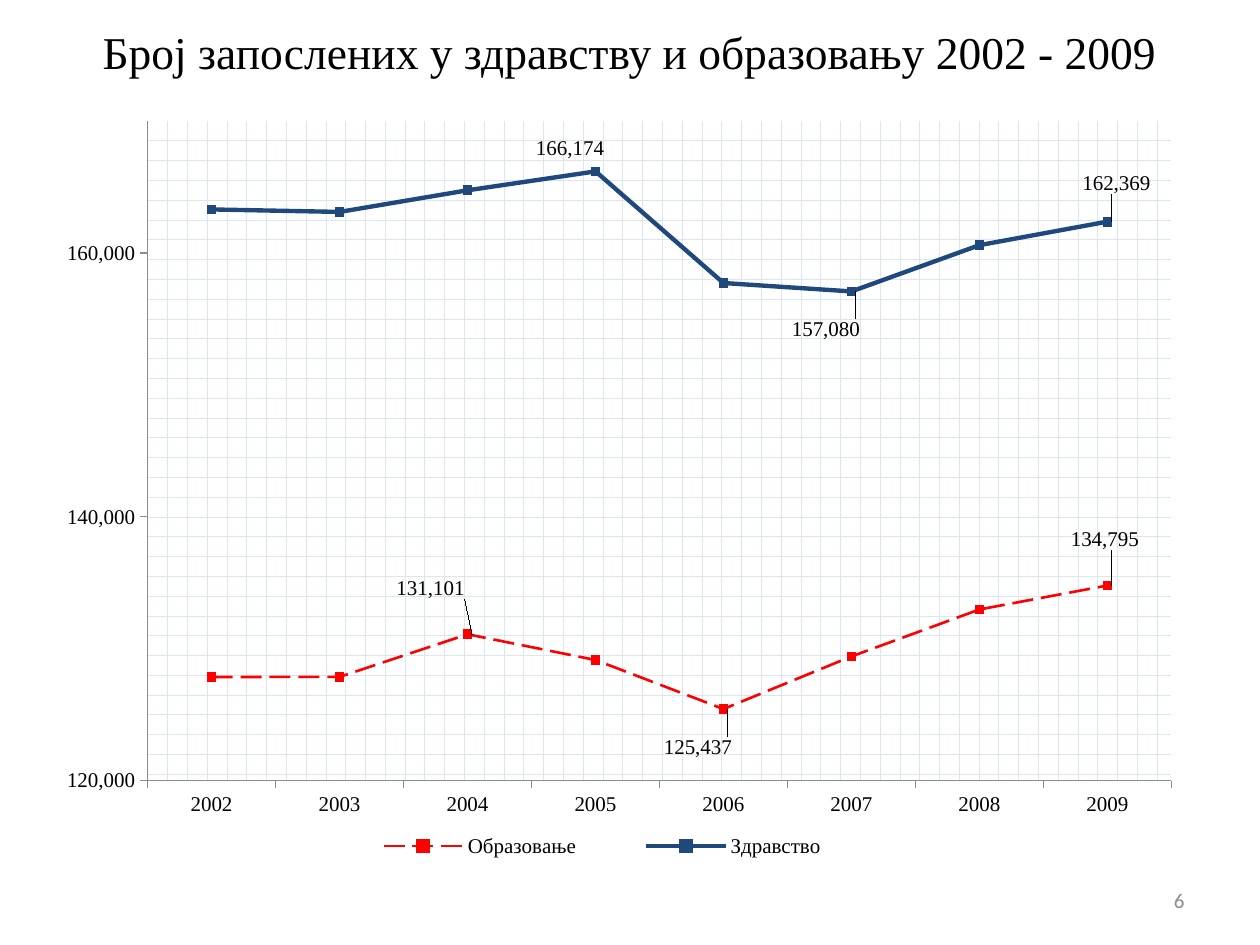
from lxml import etree
from pptx import Presentation
from pptx.chart.data import CategoryChartData
from pptx.dml.color import RGBColor
from pptx.enum import chart as charts, dml, text
from pptx.oxml.ns import qn
from pptx.util import Cm, Pt

BLACK = RGBColor(0, 0, 0)
WHITE = RGBColor(255, 255, 255)
GREY = RGBColor(0x8C, 0x8C, 0x8C)
RED = RGBColor(255, 0, 0)
NAVY = RGBColor(0x1F, 0x49, 0x7D)
SERIF = "Times New Roman"

YEARS = [str(year) for year in range(2002, 2010)]
# Label offsets are fractions of the chart size, keyed by point index
SERIES = [
    {"name": "Образовање", "color": RED, "width": 1.5, "dash": dml.MSO_LINE.LONG_DASH,
     "values": [127865, 127871, 131101, 129149, 125437, 129421, 132982, 134795],
     "labels": {2: (-0.07, -0.06), 4: (-0.06, 0.05), 7: (-0.04, -0.06)}},
    {"name": "Здравство", "color": NAVY, "width": 2.5, "dash": None,
     "values": [163293, 163104, 164743, 166174, 157720, 157080, 160587, 162369],
     "labels": {3: (-0.06, -0.03), 5: (-0.06, 0.05), 7: (-0.03, -0.05)}},
]


def set_all(target, values):
    for name, value in values.items():
        setattr(target, name, value)


def format_font(font, size, color=BLACK, name=SERIF):
    set_all(font, {"size": Pt(size), "name": name, "bold": False})
    font.color.rgb = color


def add_text(page, wording, place, align, size, color=BLACK, name=SERIF):
    frame = page.shapes.add_textbox(*map(Cm, place)).text_frame
    set_all(frame, {"word_wrap": True, "vertical_anchor": text.MSO_ANCHOR.MIDDLE})
    para = frame.paragraphs[0]
    para.alignment = align
    span = para.add_run()
    span.text = wording
    format_font(span.font, size, color, name)


def set_layout(parent, index, values):
    """Place a chart part by hand, given its layout values."""
    for old in parent.findall(qn("c:layout")):
        parent.remove(old)
    layout = etree.Element(qn("c:layout"))
    manual = etree.SubElement(layout, qn("c:manualLayout"))
    for tag, value in values.items():
        etree.SubElement(manual, qn(f"c:{tag}")).set("val", str(value))
    parent.insert(index, layout)


def fill_plot_area(plot_area):
    """Light dotted grid behind the lines."""
    properties = etree.SubElement(plot_area, qn("c:spPr"))
    pattern = etree.SubElement(properties, qn("a:pattFill"), prst="dotGrid")
    for tag, color in (("fgClr", "DCE6F2"), ("bgClr", "FFFFFF")):
        holder = etree.SubElement(pattern, qn(f"a:{tag}"))
        etree.SubElement(holder, qn("a:srgbClr"), val=color)


def format_axis(axis):
    set_all(axis, {"has_major_gridlines": False,
                   "major_tick_mark": charts.XL_TICK_MARK.OUTSIDE,
                   "minor_tick_mark": charts.XL_TICK_MARK.NONE})
    axis.format.line.color.rgb = GREY
    axis.format.line.width = Pt(0.75)
    format_font(axis.tick_labels.font, 12)


def format_series(series, style):
    color = style["color"]
    series.smooth = False
    line = series.format.line
    line.color.rgb = color
    set_all(line, {"width": Pt(style["width"]), "dash_style": style["dash"]})

    marker = series.marker
    set_all(marker, {"style": charts.XL_MARKER_STYLE.SQUARE, "size": 5})
    marker.format.fill.solid()
    marker.format.fill.fore_color.rgb = color
    marker.format.line.color.rgb = color

    # Only the turning points carry a value
    labels = series.data_labels
    set_all(labels, {"show_value": False, "number_format": "#,##0",
                     "number_format_is_linked": False})
    format_font(labels.font, 12)
    for index, (x, y) in style["labels"].items():
        label = series.points[index].data_label
        format_font(label.font, 12)
        label.position = charts.XL_LABEL_POSITION.RIGHT
        element = labels._element.find(f"{qn('c:dLbl')}[{qn('c:idx')}][last()]")
        for element in labels._element.findall(qn("c:dLbl")):
            if element.find(qn("c:idx")).get("val") == str(index):
                set_layout(element, 1, {"x": x, "y": y})


def add_line_chart(page, place):
    data = CategoryChartData(number_format="#,##0")
    data.categories = YEARS
    for style in SERIES:
        data.add_series(style["name"], style["values"])
    chart = page.shapes.add_chart(
        charts.XL_CHART_TYPE.LINE_MARKERS, *map(Cm, place), data).chart
    set_all(chart, {"has_title": False, "has_legend": True})
    format_font(chart.font, 10, name="Calibri")
    chart.plots[0].vary_by_categories = False

    # Axes
    for axis in (chart.category_axis, chart.value_axis):
        format_axis(axis)
    set_all(chart.value_axis, {"minimum_scale": 120000, "maximum_scale": 170000,
                               "major_unit": 20000})
    set_all(chart.value_axis.tick_labels, {"number_format": "#,##0",
                                           "number_format_is_linked": False})

    # Lines
    for series, style in zip(chart.plots[0].series, SERIES):
        format_series(series, style)

    # Legend
    legend = chart.legend
    set_all(legend, {"position": charts.XL_LEGEND_POSITION.BOTTOM,
                     "include_in_layout": False})
    format_font(legend.font, 12)
    edges = {"xMode": "edge", "yMode": "edge"}
    set_layout(legend._element, 1, {**edges, "x": 0.24, "y": 0.94, "w": 0.49, "h": 0.05})

    # Plot area
    plot_area = chart._chartSpace.chart.plotArea
    set_layout(plot_area, 0, {"layoutTarget": "inner", **edges,
                              "x": 0.09, "y": 0.02, "w": 0.89, "h": 0.86})
    fill_plot_area(plot_area)


def main():
    deck = Presentation()
    set_all(deck, {"slide_width": Cm(25.4), "slide_height": Cm(19.05)})
    page = deck.slides.add_slide(deck.slide_layouts[6])
    page.background.fill.solid()
    page.background.fill.fore_color.rgb = WHITE

    add_text(page, "Број запослених у здравству и образовању 2002 - 2009",
             (0, 0.13, 25.4, 1.8), text.PP_ALIGN.CENTER, 26)
    add_line_chart(page, (0.89, 2.13, 23.19, 15.47))
    # Page number
    add_text(page, "6", (18.2, 17.65, 5.93, 1.01), text.PP_ALIGN.RIGHT, 12, GREY, "Calibri")
    deck.save("out.pptx")


if __name__ == "__main__":
    main()
